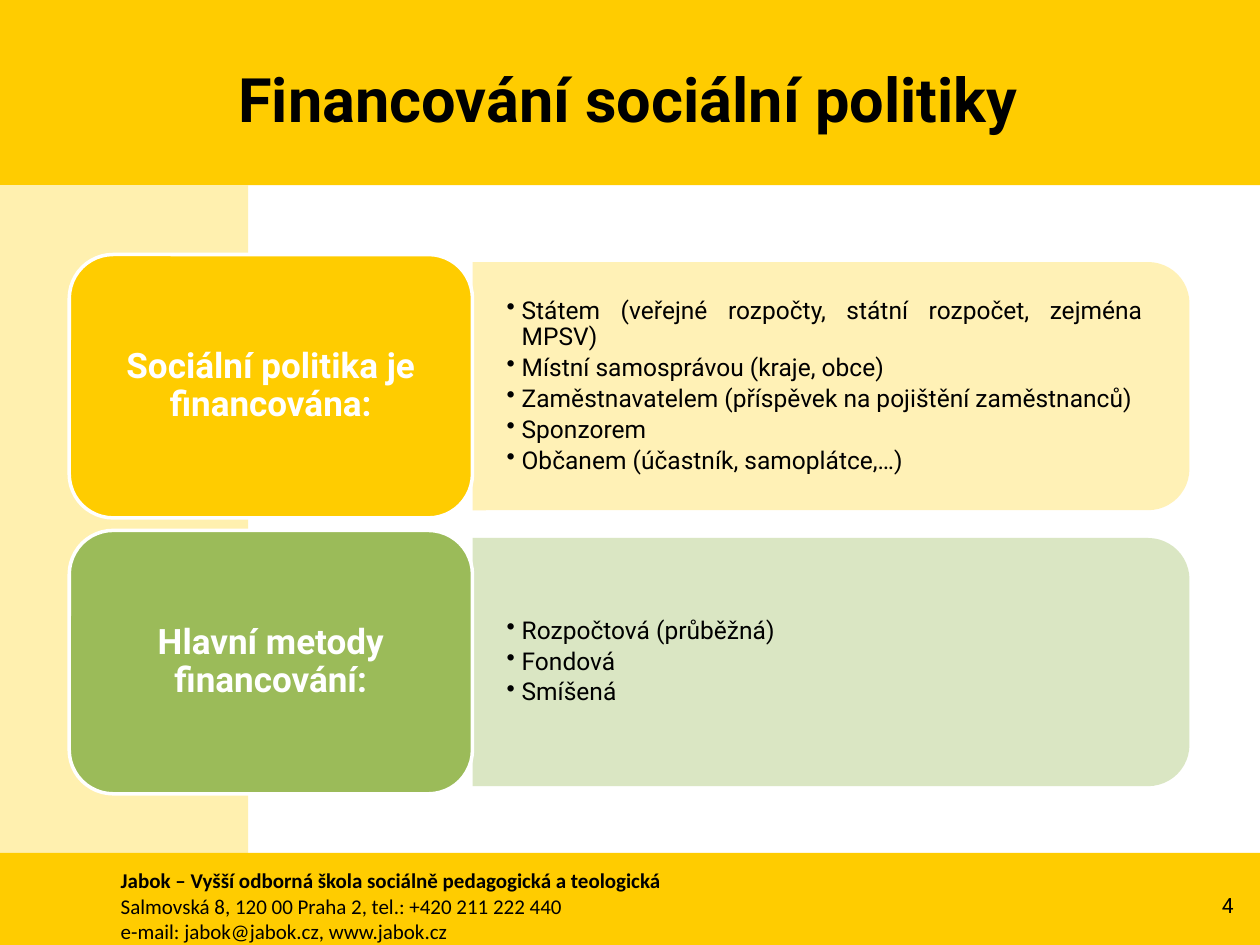
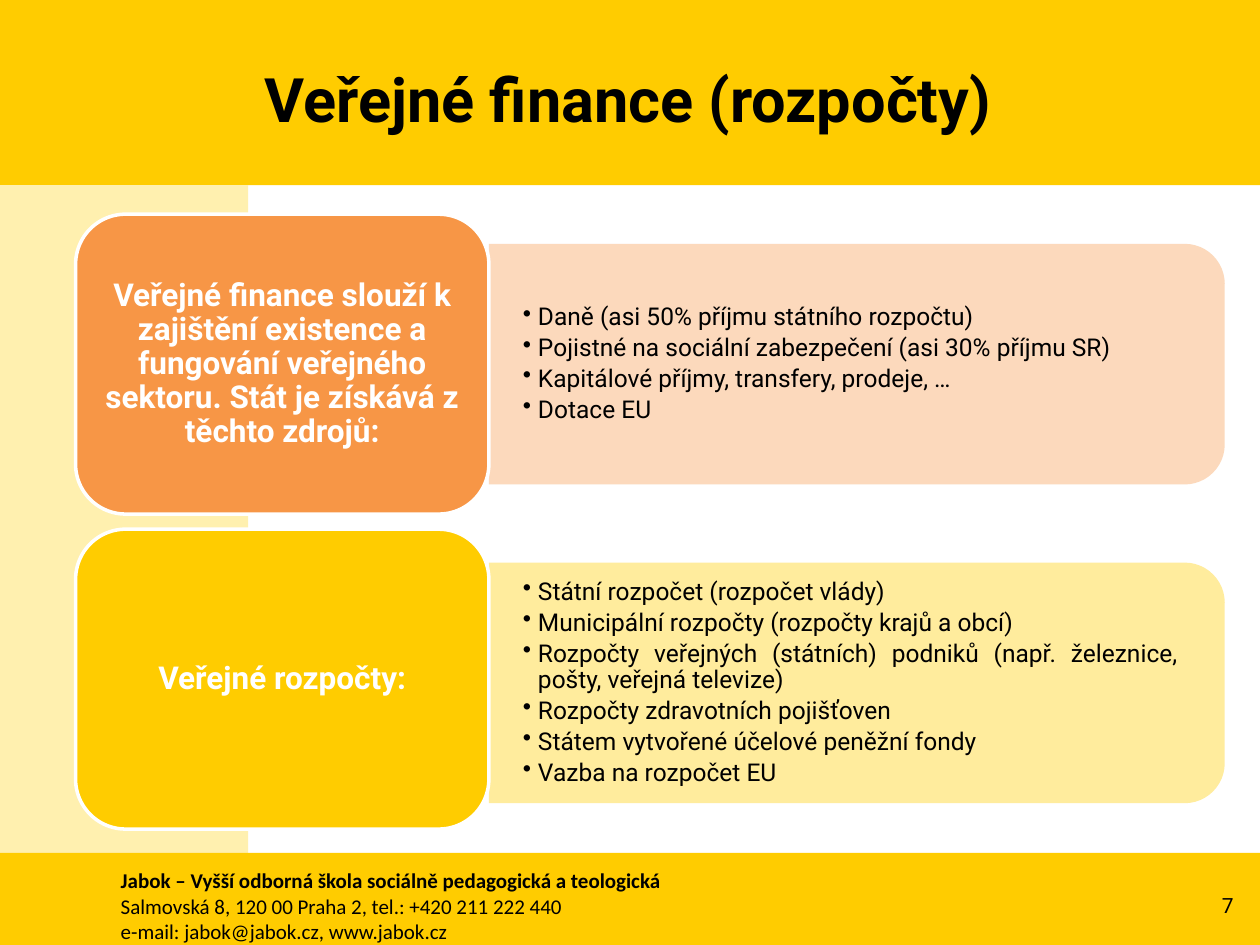
from lxml.etree import SubElement
from pptx import Presentation
from pptx.dml.color import RGBColor
from pptx.enum.shapes import MSO_SHAPE
from pptx.enum.text import MSO_ANCHOR, PP_ALIGN
from pptx.oxml.ns import qn
from pptx.util import Inches, Pt

YELLOW, CREAM, BLACK, WHITE = "FFCC00", "FFF0AF", "000000", "FFFFFF"
FONT, FOOTER_FONT = "Roboto", "Calibri"
LEFT, CENTER, RIGHT, JUSTIFY = (
    PP_ALIGN.LEFT, PP_ALIGN.CENTER, PP_ALIGN.RIGHT, PP_ALIGN.JUSTIFY)

# Shared bands: left, top, width, height, colour
BANDS = [
    (0, 0, 10, 1.47, YELLOW),
    (0, 1.47, 1.97, 5.3, CREAM),
    (0, 6.77, 10, 0.73, YELLOW),
]
SCHOOL = "Jabok – Vyšší odborná škola sociálně pedagogická a teologická"
CONTACT = [
    "Salmovská 8, 120 00 Praha 2, tel.: +420 211 222 440",
    "e-mail: jabok@jabok.cz, www.jabok.cz",
]

# Label box: left, top, width, height; panel: width, height; pitch between rows
SLIDES = [
    {
        "title": "Financování sociální politiky", "number": "4",
        "label_box": (0.55, 2.02, 3.2, 2.09), "panel": (5.69, 1.97),
        "pitch": 2.19, "panel_pitch": 2.19, "label_size": 20,
        "rows": [
            ("Sociální politika je financována:", YELLOW, CREAM, JUSTIFY, [
                "Státem (veřejné rozpočty, státní rozpočet, zejména MPSV)",
                "Místní samosprávou (kraje, obce)",
                "Zaměstnavatelem (příspěvek na pojištění zaměstnanců)",
                "Sponzorem",
                "Občanem (účastník, samoplátce,…)",
            ]),
            ("Hlavní metody financování:", "9BBB59", "D7E4BD", LEFT, [
                "Rozpočtová (průběžná)",
                "Fondová",
                "Smíšená",
            ]),
        ],
    },
    {
        "title": "Veřejné finance (rozpočty)", "number": "7",
        "label_box": (0.6, 1.7, 3.28, 2.38), "panel": (5.84, 1.91),
        "pitch": 2.5, "panel_pitch": 2.53, "label_size": 18,
        "rows": [
            ("Veřejné finance slouží k zajištění existence a fungování "
             "veřejného sektoru. Stát je získává z těchto zdrojů:",
             "F79646", "FCD5B5", LEFT, [
                 "Daně (asi 50% příjmu státního rozpočtu)",
                 "Pojistné na sociální zabezpečení (asi 30% příjmu SR)",
                 "Kapitálové příjmy, transfery, prodeje, …",
                 "Dotace EU",
             ]),
            ("Veřejné rozpočty:", YELLOW, "FFEA93", JUSTIFY, [
                "Státní rozpočet (rozpočet vlády)",
                "Municipální rozpočty (rozpočty krajů a obcí)",
                "Rozpočty veřejných (státních) podniků (např. železnice, "
                "pošty, veřejná televize)",
                "Rozpočty zdravotních pojišťoven",
                "Státem vytvořené účelové peněžní fondy",
                "Vazba na rozpočet EU",
            ]),
        ],
    },
]


def rgb(color):
    return RGBColor.from_string(color)


def add_box(s, kind, left, top, width, height, color, line=None):
    sp = s.shapes.add_shape(kind, Inches(left), Inches(top),
                            Inches(width), Inches(height))
    sp.shadow.inherit = False
    sp.fill.solid()
    sp.fill.fore_color.rgb = rgb(color)
    if line:
        sp.line.color.rgb = rgb(line)
        sp.line.width = Pt(2)
    else:
        sp.line.fill.background()
    return sp


def add_text_box(s, left, top, width, height):
    return s.shapes.add_textbox(Inches(left), Inches(top),
                                Inches(width), Inches(height))


def write(sp, lines, size=12, font=FONT, color=BLACK, bold=False, bold_first=False,
          align=LEFT, anchor=MSO_ANCHOR.MIDDLE, insets=(0.1, 0.05),
          spacing=None, after=0, bullet=False):
    tf = sp.text_frame
    tf.word_wrap = True
    tf.vertical_anchor = anchor
    tf.margin_left = tf.margin_right = Inches(insets[0])
    tf.margin_top = tf.margin_bottom = Inches(insets[1])
    for i, line in enumerate(lines):
        p = tf.add_paragraph() if i else tf.paragraphs[0]
        p.alignment = align
        p.space_after = Pt(after)
        if spacing:
            p.line_spacing = spacing
        if bullet:
            pPr = p._p.get_or_add_pPr()
            pPr.set("marL", str(Inches(0.12)))
            pPr.set("indent", str(-Inches(0.12)))
            SubElement(pPr, qn("a:buChar")).set("char", "•")
        r = p.add_run()
        r.text = line
        r.font.name = font
        r.font.size = Pt(size)
        r.font.bold = bold or (bold_first and i == 0)
        r.font.color.rgb = rgb(color)


def add_frame(s, title, number):
    for *box, color in BANDS:
        add_box(s, MSO_SHAPE.RECTANGLE, *box, color)
    write(add_text_box(s, 0.86, 6.84, 8.19, 0.66), [SCHOOL, *CONTACT],
          font=FOOTER_FONT, bold_first=True, anchor=MSO_ANCHOR.TOP)
    write(add_text_box(s, 9.26, 6.98, 0.63, 0.4), [number], align=RIGHT)
    write(add_text_box(s, 0.86, 0.45, 8.25, 0.65), [title],
          size=35, bold=True, align=CENTER)


def add_panel(s, left, middle, width, height, color, items, align):
    # The shape is turned a quarter, so its sides swap around the shared centre
    sp = add_box(s, MSO_SHAPE.ROUND_2_SAME_RECTANGLE, left + (width - height) / 2,
                 middle - width / 2, height, width, color)
    sp.rotation = 90
    clr = sp.fill._xPr.find(qn("a:solidFill"))[0]
    SubElement(clr, qn("a:alpha")).set("val", "90000")
    # Text keeps clear of the rounded corners
    box = add_text_box(s, left, middle - height / 2 + 0.1,
                       width - 0.1, height - 0.2)
    write(box, items, size=14, align=align, insets=(0.27, 0.14),
          spacing=0.9, after=2.5, bullet=True)


def add_rows(s, data):
    left, top, width, height = data["label_box"]
    for i, (label, color, tint, align, items) in enumerate(data["rows"]):
        middle = top + height / 2 + i * data["panel_pitch"]
        add_panel(s, left + width, middle, *data["panel"], tint, items, align)
        sp = add_box(s, MSO_SHAPE.ROUNDED_RECTANGLE, left,
                     top + i * data["pitch"], width, height, color, line=WHITE)
        write(sp, [label], size=data["label_size"], color=WHITE, bold=True,
              align=CENTER, insets=(0.08, 0.04), spacing=0.9)


def main():
    prs = Presentation()
    prs.slide_width, prs.slide_height = Inches(10), Inches(7.5)
    for data in SLIDES:
        s = prs.slides.add_slide(prs.slide_layouts[6])
        add_frame(s, data["title"], data["number"])
        add_rows(s, data)
    prs.save("out.pptx")


if __name__ == "__main__":
    main()
